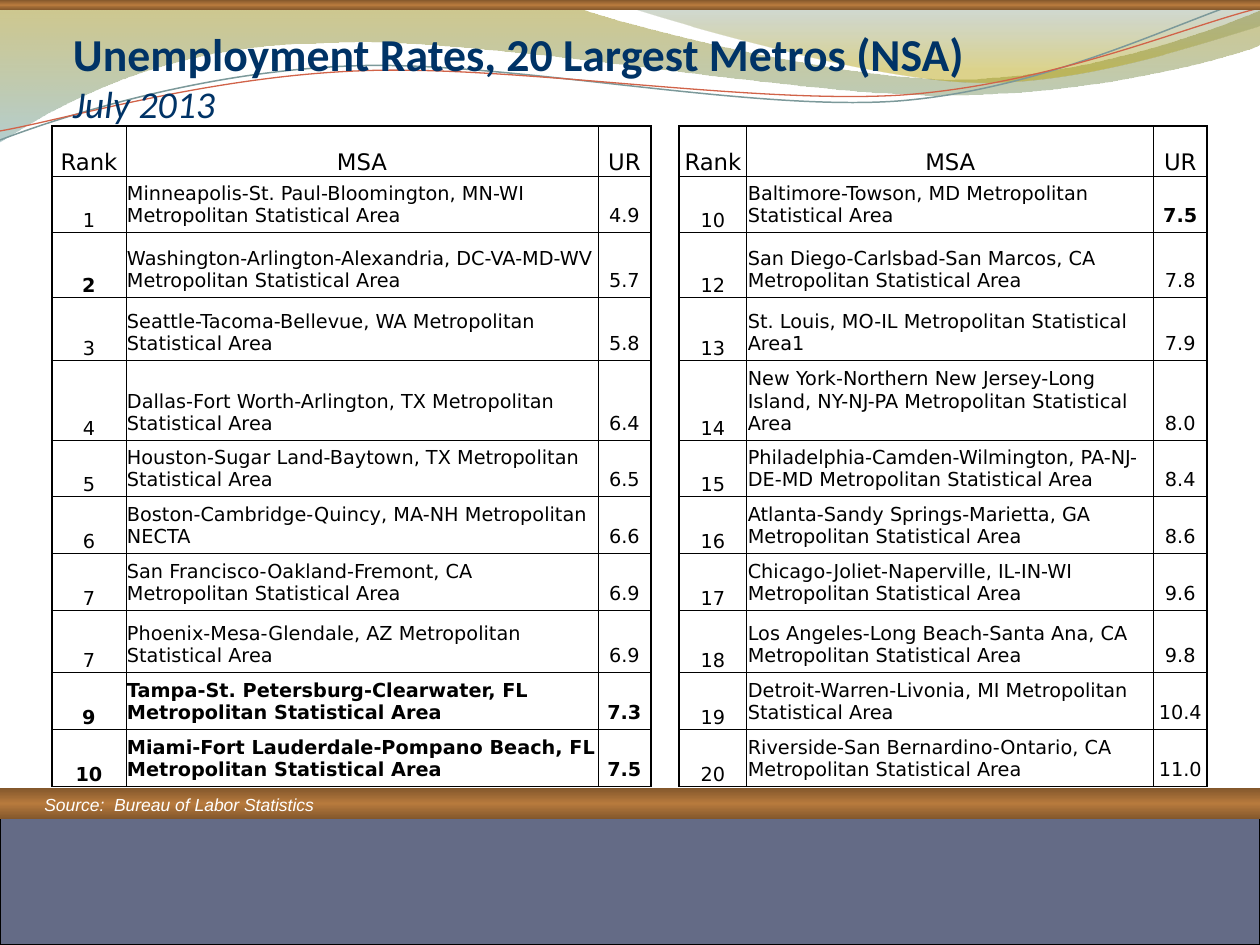
from lxml import etree
from pptx import Presentation
from pptx.dml.color import RGBColor
from pptx.enum.shapes import MSO_SHAPE as Kind
from pptx.enum.text import MSO_ANCHOR as Anchor, PP_ALIGN as Align
from pptx.oxml import parse_xml
from pptx.oxml.ns import nsdecls, qn
from pptx.util import Pt

PX = 914400 / 126
BLACK = RGBColor(0x00, 0x00, 0x00)
WHITE = RGBColor(0xFF, 0xFF, 0xFF)
NAVY = RGBColor(0x00, 0x33, 0x66)
SLATE = RGBColor(0x64, 0x6B, 0x86)
TEAL = RGBColor(0x7C, 0x99, 0x9A)
RED = RGBColor(0xD1, 0x63, 0x49)
BROWN = RGBColor(0x83, 0x57, 0x2C)
COPPER = RGBColor(0xB7, 0x7A, 0x3D)
OLIVE = RGBColor(0x97, 0x85, 0x00)
AQUA = RGBColor(0x77, 0xA5, 0xA6)
GREY = RGBColor(0x64, 0x84, 0x84)
GOLD = RGBColor(0xB4, 0x9F, 0x00)


def write(para, text, size=11, font="DejaVu Sans", color=BLACK,
          bold=False, italic=False, align=Align.LEFT):
    para.alignment = align
    run = para.add_run()
    run.text = text
    face = run.font
    face.size, face.name, face.bold, face.italic = Pt(size), font, bold, italic
    face.color.rgb = color


def shade(shape, stops):
    """Fill from top to bottom; a stop is place, colour and opacity in percent."""
    marks = "".join(
        f'<a:gs pos="{pos * 1000}"><a:srgbClr val="{tone}">'
        f'<a:alpha val="{alpha * 1000}"/></a:srgbClr></a:gs>'
        for pos, tone, alpha in stops)
    shape.fill.background()
    props = shape._element.spPr
    props.replace(props.find(qn("a:noFill")), parse_xml(
        f'<a:gradFill {nsdecls("a")} rotWithShape="1"><a:gsLst>{marks}</a:gsLst>'
        '<a:lin ang="5400000" scaled="0"/></a:gradFill>'))
    shape.line.fill.background()


deck = Presentation()
deck.slide_width, deck.slide_height = round(1260 * PX), round(945 * PX)
slide = deck.slides.add_slide(deck.slide_layouts[6])
shapes = slide.shapes

# Waves: a step of two numbers is a straight line, one of six a Bezier curve
waves = [
    ((0, -1), [(554, -1), (600, 21, 837, 79, 955, 79),
               (1075, 79, 1207, 33, 1260, 11), (1261, 45),
               (1239, 55, 1096, 96, 940, 95), (784, 95, 481, 35, 324, 43),
               (163, 44, 58, 105, -1, 142)],
     [(0, OLIVE, 45), (100, AQUA, 55)], None, 0),
    ((604, -1), [(641, 14, 859, 78, 969, 82), (1079, 87, 1211, 40, 1260, 26),
                 (1260, 0)],
     [(0, GREY, 30), (80, GOLD, 45)], None, 0),
    ((0, 140), [(60, 117, 199, 72, 349, 66), (498, 59, 747, 112, 898, 101),
                (1050, 89, 1182, 19, 1257, -3)], None, TEAL, 0.85),
    ((0, 131), [(59, 121, 207, 77, 357, 71), (508, 64, 752, 105, 903, 95),
                (1053, 84, 1186, 26, 1260, 8)], None, RED, 0.75),
]
for start, steps, stops, tone, width in waves:
    flat = [n for step in steps for n in step]
    dots = [(round(x * PX), round(y * PX)) for x, y in zip(flat[::2], flat[1::2])]
    pen = shapes.build_freeform(round(start[0] * PX), round(start[1] * PX))
    pen.add_line_segments(dots, close=stops is not None)
    wave = pen.convert_to_shape()
    wave.shadow.inherit = False
    legs = iter(list(wave._element.iter(qn("a:lnTo"))))
    for step in steps:
        leg = next(legs)
        if len(step) == 6:
            curve = etree.Element(qn("a:cubicBezTo"))
            leg.addprevious(curve)
            for part in (leg, next(legs), next(legs)):
                curve.append(part[0])
                part.getparent().remove(part)
    if stops:
        shade(wave, stops)
    else:
        wave.fill.background()
        wave.line.color.rgb = tone
        wave.line.width = Pt(width)

# Bars
for top, high, metal in [(0, 10, True), (809, 136, False), (788, 31, True)]:
    bar = shapes.add_shape(Kind.RECTANGLE, 0, round(top * PX),
                           round(1260 * PX), round(high * PX))
    bar.shadow.inherit = False
    if metal:
        shade(bar, [(0, BROWN, 100), (50, COPPER, 100), (100, BROWN, 100)])
    else:
        bar.fill.solid()
        bar.fill.fore_color.rgb = SLATE
        bar.line.color.rgb = BLACK
        bar.line.width = Pt(0.75)

# Title and source
box = shapes.add_textbox(*[round(n * PX) for n in (73, 31, 1124, 95)])
frame = box.text_frame
frame.word_wrap = True
frame.vertical_anchor = Anchor.BOTTOM
frame.margin_left = frame.margin_right = frame.margin_bottom = 0
para = frame.paragraphs[0]
write(para, "Unemployment Rates, 20 Largest Metros (NSA)", size=26.1,
      font="Calibri", color=NAVY, bold=True)
para.add_line_break()
write(para, "July 2013", size=21.6, font="Calibri", color=NAVY, italic=True)

box = shapes.add_textbox(*[round(n * PX) for n in (32, 788, 756, 34)])
box.text_frame.word_wrap = True
write(box.text_frame.paragraphs[0], "Source:  Bureau of Labor Statistics",
      size=10, font="Arial", color=WHITE, italic=True)

# Table: two ranked lists with an open column between them
AREA = " Metropolitan Statistical Area"
left = [
    ("Rank", "MSA", "UR"),
    ("1", "Minneapolis-St. Paul-Bloomington, MN-WI" + AREA, "4.9"),
    ("2", "Washington-Arlington-Alexandria, DC-VA-MD-WV" + AREA, "5.7"),
    ("3", "Seattle-Tacoma-Bellevue, WA" + AREA, "5.8"),
    ("4", "Dallas-Fort Worth-Arlington, TX" + AREA, "6.4"),
    ("5", "Houston-Sugar Land-Baytown, TX" + AREA, "6.5"),
    ("6", "Boston-Cambridge-Quincy, MA-NH Metropolitan NECTA", "6.6"),
    ("7", "San Francisco-Oakland-Fremont, CA" + AREA, "6.9"),
    ("7", "Phoenix-Mesa-Glendale, AZ" + AREA, "6.9"),
    ("9", "Tampa-St. Petersburg-Clearwater, FL" + AREA, "7.3"),
    ("10", "Miami-Fort Lauderdale-Pompano Beach, FL" + AREA, "7.5"),
]
right = [
    ("Rank", "MSA", "UR"),
    ("10", "Baltimore-Towson, MD" + AREA, "7.5"),
    ("12", "San Diego-Carlsbad-San Marcos, CA" + AREA, "7.8"),
    ("13", "St. Louis, MO-IL" + AREA + "1", "7.9"),
    ("14", "New York-Northern New Jersey-Long Island, NY-NJ-PA" + AREA, "8.0"),
    ("15", "Philadelphia-Camden-Wilmington, PA-NJ-DE-MD" + AREA, "8.4"),
    ("16", "Atlanta-Sandy Springs-Marietta, GA" + AREA, "8.6"),
    ("17", "Chicago-Joliet-Naperville, IL-IN-WI" + AREA, "9.6"),
    ("18", "Los Angeles-Long Beach-Santa Ana, CA" + AREA, "9.8"),
    ("19", "Detroit-Warren-Livonia, MI" + AREA, "10.4"),
    ("20", "Riverside-San Bernardino-Ontario, CA" + AREA, "11.0"),
]
strong = {(1, 6), (2, 0)} | {(r, c) for r in (9, 10) for c in range(3)}
wide = [74, 472, 53, 28, 68, 407, 53]
tall = [50, 56, 65, 63, 80, 56, 57, 57, 62, 57, 57]
grid = shapes.add_table(len(tall), len(wide), *[
    round(n * PX) for n in (52, 126, sum(wide), sum(tall))]).table
grid.first_row = grid.horz_banding = False
for col, n in zip(grid.columns, wide):
    col.width = round(n * PX)
for row, n in zip(grid.rows, tall):
    row.height = round(n * PX)

for r, (west, east) in enumerate(zip(left, right)):
    for c, text in enumerate(west + ("",) + east):
        cell = grid.cell(r, c)
        head, gap, name = r == 0, c == 3, c in (1, 5)
        tight = head or c in (0, 4)
        cell.vertical_anchor = Anchor.BOTTOM
        cell.margin_left = cell.margin_right = round(PX)
        cell.margin_top = round((1 if tight else 5) * PX)
        cell.margin_bottom = round((0 if tight else 5) * PX)
        if not gap:
            write(cell.text_frame.paragraphs[0], text, size=13 if head else 11,
                  bold=(r, c) in strong,
                  align=Align.LEFT if name and not head else Align.CENTER)
        props = cell._tc.get_or_add_tcPr()
        edges = {"L": 1 if c in (0, 3, 4) else 0.5,
                 "R": 1 if c in (2, 3, 6) else 0.5,
                 "T": 0 if gap else 1 if head else 0.5,
                 "B": 0 if gap else 0.5}
        for side, width in edges.items():
            edge = etree.SubElement(props, qn(f"a:ln{side}"), w=str(Pt(width)))
            if width:
                ink = etree.SubElement(edge, qn("a:solidFill"))
                etree.SubElement(ink, qn("a:srgbClr"), val=str(BLACK))
            else:
                etree.SubElement(edge, qn("a:noFill"))
        cell.fill.background()

deck.save("out.pptx")
